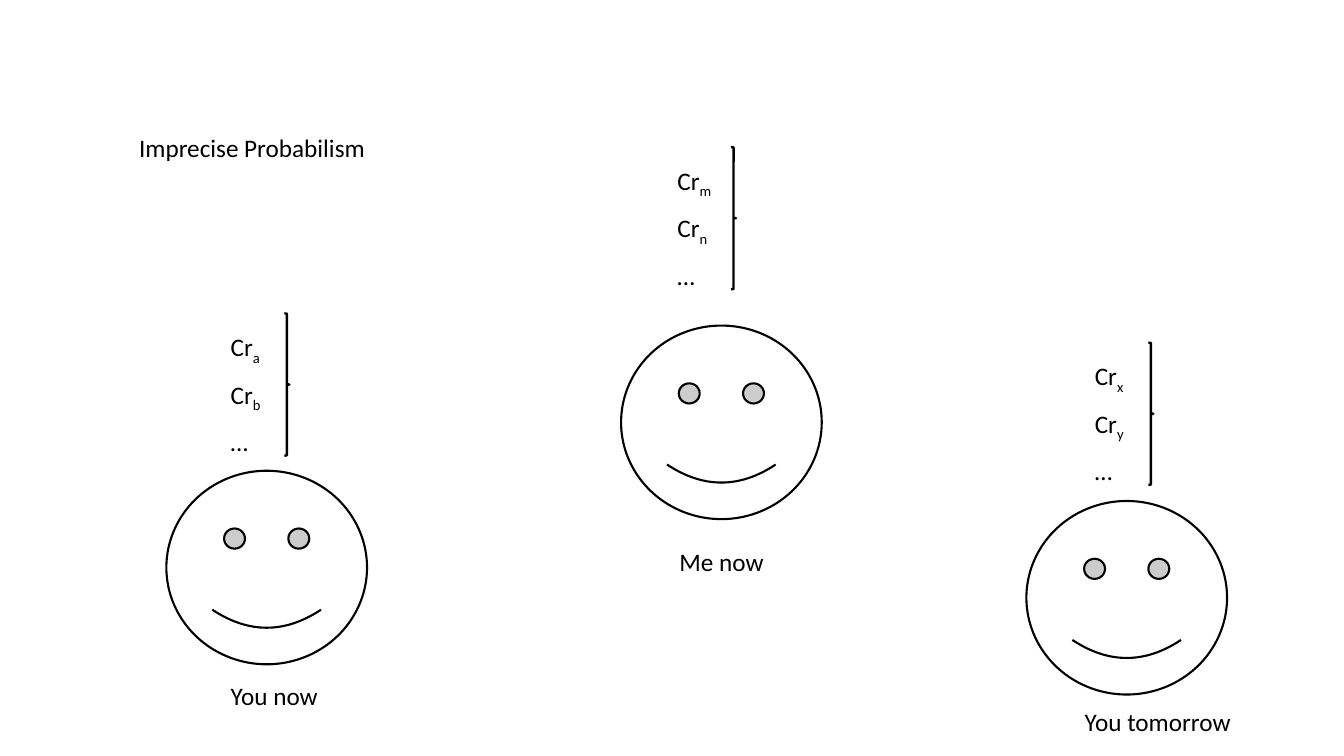
"""Build the slide on imprecise probabilism with three believers and their credences."""
import dataclasses

import pptx
import pptx.dml.color
import pptx.enum.shapes
import pptx.enum.text
import pptx.shapes.autoshape
import pptx.slide
import pptx.util

Inches = pptx.util.Inches
Shape = pptx.shapes.autoshape.Shape
Slide = pptx.slide.Slide
ShapeKind = pptx.enum.shapes.MSO_SHAPE

COLOURS = {"ink": "000000", "paper": "FFFFFF"}
FONT = "Calibri"
FACE_WIDTH, FACE_HEIGHT = 1.99, 1.92
BRACE_WIDTH, BRACE_HEIGHT = 0.05, 1.41
BRACE_RIGHT_SHIFT, BRACE_RISE = 0.63, 0.13
LABEL_WIDTH, LABEL_HEIGHT = 3.82, 0.4
ROW_PITCH = 0.47


@dataclasses.dataclass(frozen=True)
class Believer:
    """A face with its caption and its set of credence functions."""
    caption: str
    indices: tuple[str, ...]
    face: tuple[float, float]
    caption_at: tuple[float, float]
    credences_at: tuple[float, float]


BELIEVERS = (
    Believer("You now", ("a", "b"), (1.65, 4.67), (2.19, 6.7), (2.19, 3.24)),
    Believer("You tomorrow", ("x", "y"), (10.18, 4.97), (10.66, 6.96), (10.76, 3.53)),
    Believer("Me now", ("m", "n"), (6.16, 3.23), (6.64, 5.37), (6.62, 1.59)),
)


def colour(name: str) -> pptx.dml.color.RGBColor:
    """Return a named colour."""
    return pptx.dml.color.RGBColor.from_string(COLOURS[name])


def write_text(shape: Shape, text: str, subscript: str = "") -> None:
    """Write left-aligned text, with an optional subscript run."""
    frame = shape.text_frame
    frame.word_wrap = True
    frame.auto_size = pptx.enum.text.MSO_AUTO_SIZE.SHAPE_TO_FIT_TEXT
    frame.vertical_anchor = pptx.enum.text.MSO_ANCHOR.TOP
    paragraph = frame.paragraphs[0]
    paragraph.alignment = pptx.enum.text.PP_ALIGN.LEFT
    for content, baseline in ((text, 0), (subscript, -25000)):
        if not content:
            continue
        run = paragraph.add_run()
        run.text = content
        run.font.name = FONT
        run.font.size = pptx.util.Pt(18)
        run.font.color.rgb = colour("ink")
        if baseline:
            run._r.get_or_add_rPr().set("baseline", str(baseline))


def add_label(slide: Slide, left: float, top: float, text: str, subscript: str = "") -> None:
    """Add a one-line text box."""
    box = slide.shapes.add_textbox(
        Inches(left), Inches(top), Inches(LABEL_WIDTH), Inches(LABEL_HEIGHT))
    write_text(box, text, subscript)


def add_outlined(slide: Slide, kind: ShapeKind, left: float, top: float,
                 width: float, height: float, line_width: float) -> Shape:
    """Add a preset shape with a dark outline and no fill."""
    shape = slide.shapes.add_shape(
        kind, Inches(left), Inches(top), Inches(width), Inches(height))
    shape.shadow.inherit = False
    shape.fill.background()
    shape.line.color.rgb = colour("ink")
    shape.line.width = pptx.util.Pt(line_width)
    return shape


def add_believer(slide: Slide, believer: Believer) -> None:
    """Draw a face, its caption and its braced credences."""
    face = add_outlined(slide, ShapeKind.SMILEY_FACE, *believer.face,
                        FACE_WIDTH, FACE_HEIGHT, 1.5)
    face.fill.solid()
    face.fill.fore_color.rgb = colour("paper")
    add_label(slide, *believer.caption_at, believer.caption)
    left, top = believer.credences_at
    rows = [("Cr", index) for index in believer.indices] + [("…", "")]
    for position, (text, subscript) in enumerate(rows):
        add_label(slide, left, top + position * ROW_PITCH, text, subscript)
    add_outlined(slide, ShapeKind.RIGHT_BRACE, left + BRACE_RIGHT_SHIFT,
                 top - BRACE_RISE, BRACE_WIDTH, BRACE_HEIGHT, 1.75)


def add_title(slide: Slide) -> None:
    """Place and format the title."""
    title = slide.shapes.title
    title.left, title.top = Inches(1.28), Inches(1.26)
    title.width, title.height = Inches(6.66), Inches(LABEL_HEIGHT)
    write_text(title, "Imprecise Probabilism")


def main() -> None:
    """Build and save the presentation."""
    presentation = pptx.Presentation()
    presentation.slide_width = Inches(13.33)
    presentation.slide_height = Inches(7.5)
    slide = presentation.slides.add_slide(presentation.slide_layouts.get_by_name("Title Only"))
    add_title(slide)
    for believer in BELIEVERS:
        add_believer(slide, believer)
    presentation.save("out.pptx")


if __name__ == "__main__":
    main()
